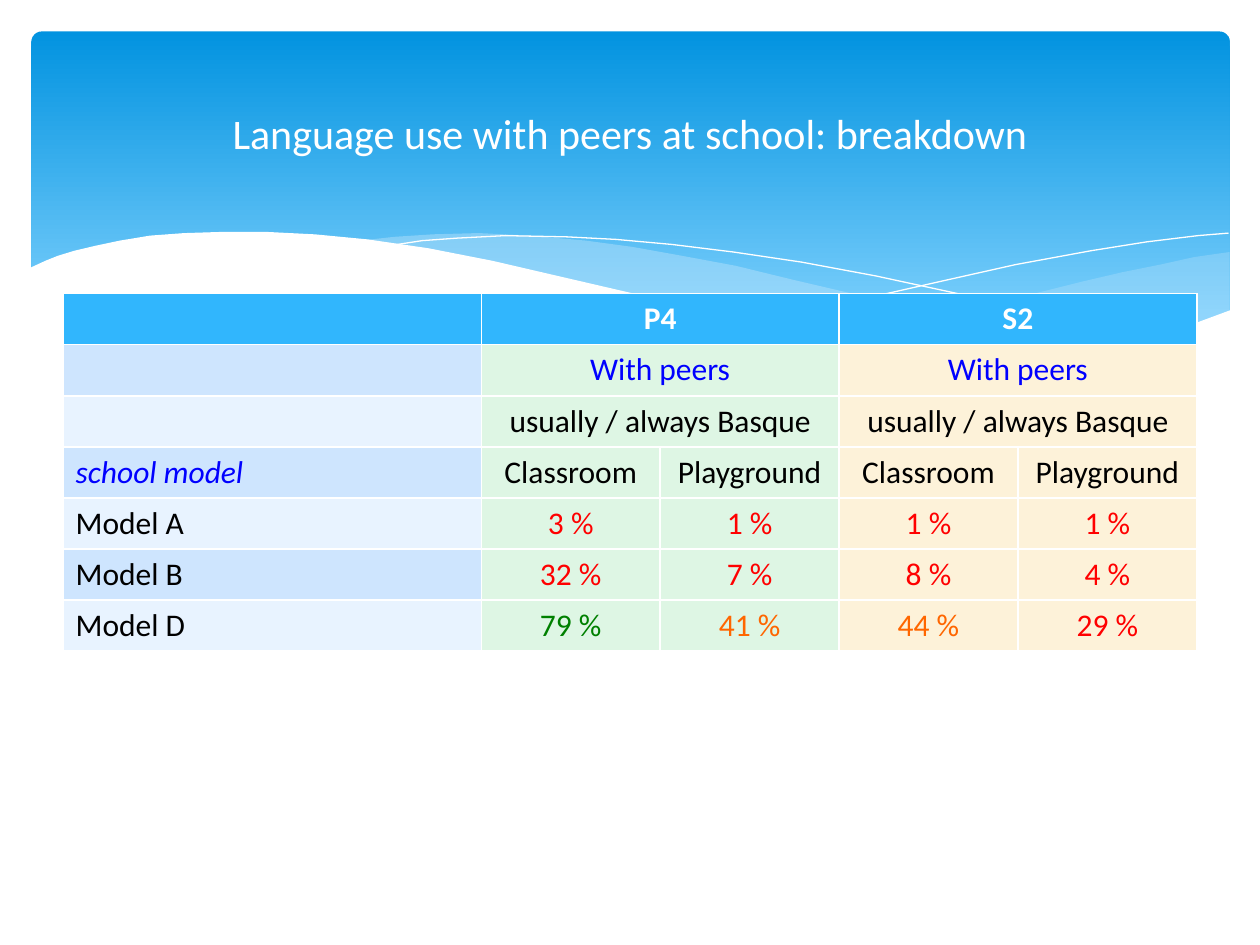
from lxml import etree
from pptx import Presentation
from pptx.dml.color import RGBColor
from pptx.enum.shapes import MSO_SHAPE
from pptx.enum.text import MSO_ANCHOR, PP_ALIGN
from pptx.oxml.ns import qn
from pptx.util import Pt

PX = 9144  # 100 px to the inch
CENTER, LEFT = PP_ALIGN.CENTER, PP_ALIGN.LEFT
MIDDLE = MSO_ANCHOR.MIDDLE
ROUND_RECT = MSO_SHAPE.ROUNDED_RECTANGLE

WHITE = RGBColor(0xFF, 0xFF, 0xFF)
BLACK = RGBColor(0x00, 0x00, 0x00)
SKY_TOP = RGBColor(0x02, 0x93, 0xE0)
SKY_BOTTOM = RGBColor(0x83, 0xD3, 0xFE)
WAVE = RGBColor(0xC6, 0xE7, 0xFC)
HEADER = RGBColor(0x31, 0xB6, 0xFD)
BAND_DARK = RGBColor(0xCE, 0xE5, 0xFE)
BAND_LIGHT = RGBColor(0xE8, 0xF3, 0xFF)
GREEN_TINT = RGBColor(0xDE, 0xF6, 0xE4)
CREAM = RGBColor(0xFD, 0xF2, 0xD9)
BLUE = RGBColor(0x00, 0x00, 0xFF)
RED = RGBColor(0xFF, 0x00, 0x00)
GREEN = RGBColor(0x00, 0x80, 0x00)
ORANGE = RGBColor(0xFF, 0x66, 0x00)


def write(tf, text, size=18, color=BLACK, bold=False, italic=False, align=CENTER):
    p = tf.paragraphs[0]
    p.alignment = align
    r = p.add_run()
    r.text = text
    r.font.name = "Calibri"
    r.font.size = Pt(size)
    r.font.color.rgb = color
    r.font.bold = bold
    r.font.italic = italic


def add_wave(points, color, alpha=None, closed=True):
    """Draw a filled wave, or a white hairline when it is not closed."""
    builder = s.shapes.build_freeform(*points[0], scale=PX)
    builder.add_line_segments(points[1:], close=closed)
    sp = builder.convert_to_shape()
    sp.shadow.inherit = False
    if not closed:
        sp.fill.background()
        sp.line.color.rgb = color
        sp.line.width = 0
        return
    sp.line.fill.background()
    sp.fill.solid()
    sp.fill.fore_color.rgb = color
    if alpha:
        clr = sp.fill._xPr.find(qn("a:solidFill"))[0]
        etree.SubElement(clr, qn("a:alpha"), val=str(alpha * 1000))


prs = Presentation()
prs.slide_width, prs.slide_height = 1000 * PX, 750 * PX
s = prs.slides.add_slide(prs.slide_layouts[5])

# Blue banner
banner = s.shapes.add_shape(ROUND_RECT, 25 * PX, 25 * PX, 951 * PX, 270 * PX)
banner.adjustments[0] = 0.03
banner.shadow.inherit = False
banner.line.fill.background()
banner.fill.gradient()
banner.fill.gradient_angle = 270
for stop, color, position in zip(banner.fill.gradient_stops,
                                 (SKY_TOP, SKY_BOTTOM), (0, 0.9)):
    stop.color.rgb = color
    stop.position = position

# Waves along the bottom of the banner
add_wave([(976, 200), (948, 204), (921, 210), (891, 216), (861, 223),
          (805, 237), (753, 248), (706, 257), (661, 265), (691, 269),
          (732, 274), (769, 277), (814, 278), (854, 276), (881, 273),
          (905, 269), (928, 263), (949, 257), (976, 247)], WAVE, alpha=29)
add_wave([(893, 273), (837, 265), (775, 254), (706, 240), (629, 222),
          (584, 211), (541, 203), (502, 196), (465, 191), (420, 187),
          (380, 185), (344, 186), (313, 188), (286, 191), (323, 196),
          (362, 203), (404, 211), (449, 222), (530, 240), (601, 255),
          (665, 266), (722, 274), (773, 277), (818, 278), (857, 277)],
         WAVE, alpha=40)
add_wave([(309, 195), (335, 191), (363, 189), (401, 187), (450, 188),
          (489, 190), (533, 194), (582, 200), (636, 208), (695, 219),
          (760, 233), (831, 251), (907, 272)], WHITE, closed=False)
add_wave([(613, 257), (653, 246), (695, 235), (748, 223), (806, 210),
          (866, 199), (910, 192), (951, 187), (975, 185)], WHITE, closed=False)
add_wave([(977, 246), (950, 256), (920, 265), (887, 271), (850, 275),
          (809, 277), (761, 275), (708, 270), (648, 262), (579, 250),
          (503, 233), (447, 220), (391, 207), (340, 197), (292, 190),
          (250, 186), (211, 184), (177, 184), (146, 185), (119, 187),
          (95, 191), (76, 195), (59, 199), (46, 203), (36, 207), (23, 213),
          (23, 329), (977, 329)], WHITE)

# Table: (text, format) per cell; a cell given as None is merged into the one before
CLASSROOM, PLAYGROUND = ("Classroom", {}), ("Playground", {})
P4 = ("P4", {"color": WHITE, "bold": True})
S2 = ("S2", {"color": WHITE, "bold": True})
PEERS = ("With peers", {"color": BLUE})
BASQUE = ("usually / always Basque", {})
EMPTY = ("", {})
rows = [
    [EMPTY, P4, None, S2, None],
    [EMPTY, PEERS, None, PEERS, None],
    [EMPTY, BASQUE, None, BASQUE, None],
    [("school model", {"color": BLUE, "italic": True}),
     CLASSROOM, PLAYGROUND, CLASSROOM, PLAYGROUND],
]
for model, values in (("Model A", [(3, RED), (1, RED), (1, RED), (1, RED)]),
                      ("Model B", [(32, RED), (7, RED), (8, RED), (4, RED)]),
                      ("Model D", [(79, GREEN), (41, ORANGE), (44, ORANGE), (29, RED)])):
    rows.append([(model, {})] + [(f"{v} %", {"color": c}) for v, c in values])

table = s.shapes.add_table(len(rows), 5, 50 * PX, 233 * PX, 900 * PX, 284 * PX).table
for column, width in zip(table.columns, [332] + [142] * 4):
    column.width = width * PX
for i, row in enumerate(rows):
    band = BAND_DARK if i % 2 else BAND_LIGHT
    fills = [band, GREEN_TINT, GREEN_TINT, CREAM, CREAM] if i else [HEADER] * 5
    for j, (content, fill) in enumerate(zip(row, fills)):
        cell = table.cell(i, j)
        cell.fill.solid()
        cell.fill.fore_color.rgb = fill
        if content is None:
            table.cell(i, j - 1).merge(cell)
        elif content[0]:
            write(cell.text_frame, content[0], align=CENTER if j else LEFT, **content[1])

# Title, brought in front of the banner
title = s.shapes.title
title.left, title.top, title.width, title.height = 50 * PX, 37 * PX, 900 * PX, 137 * PX
title.text_frame.vertical_anchor = MIDDLE
write(title.text_frame, "Language use with peers at school: breakdown", size=24, color=WHITE)
s.shapes.element.append(title.element)

prs.save("out.pptx")
